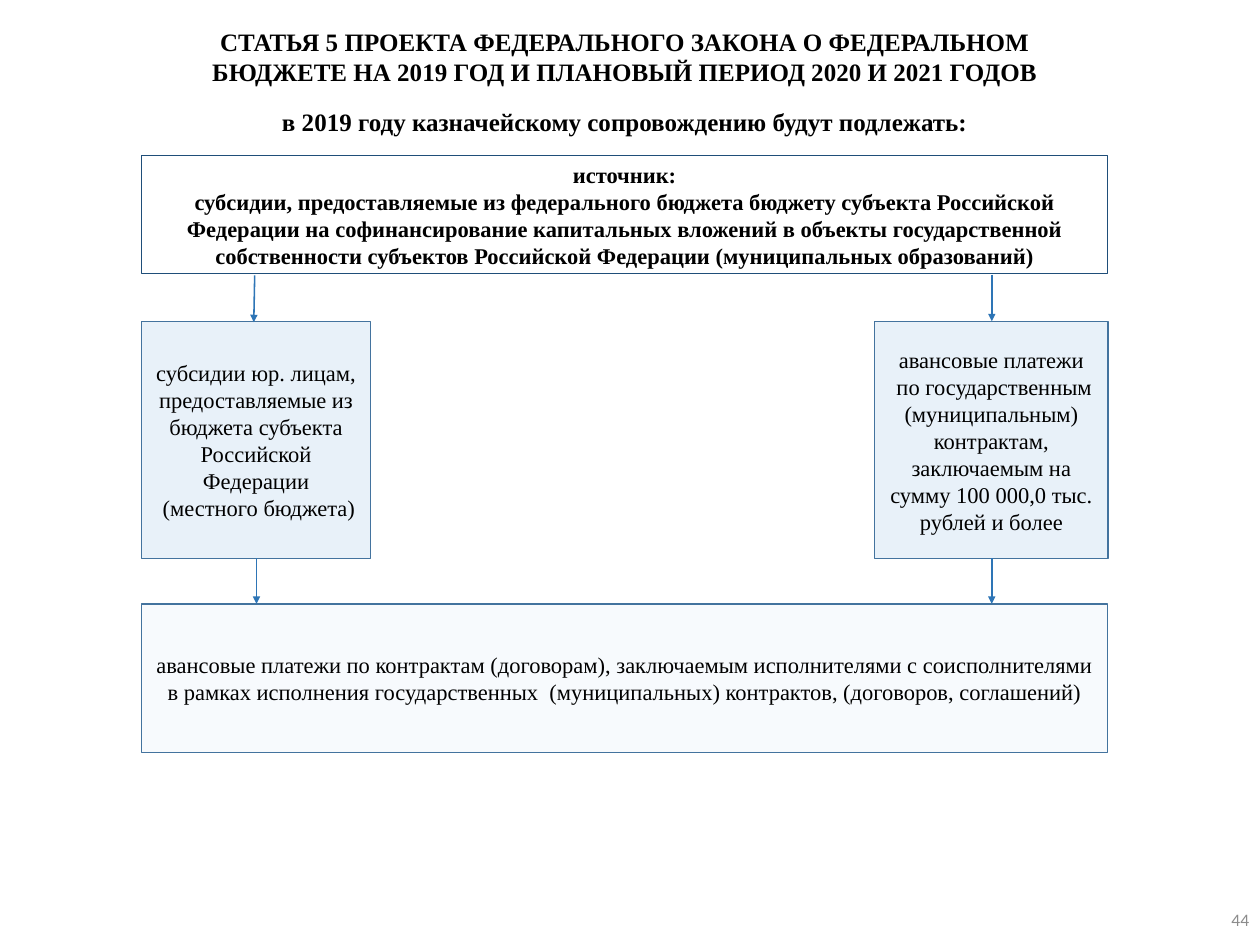
from lxml.etree import SubElement
from pptx import Presentation
from pptx.dml.color import RGBColor
from pptx.enum.shapes import MSO_CONNECTOR, MSO_SHAPE
from pptx.enum.text import MSO_ANCHOR, PP_ALIGN
from pptx.oxml.ns import qn
from pptx.util import Inches, Pt

theme = {
    "ink": RGBColor.from_string("000000"),
    "gray": RGBColor.from_string("8C8C8C"),
    "pale": RGBColor.from_string("DEEBF7"),
    "edge": RGBColor.from_string("43739E"),
    "navy": RGBColor.from_string("1F4E79"),
    "arrow": RGBColor.from_string("2E75B6"),
    "head": {"name": "Times New Roman", "size": Pt(20), "bold": True},
    "strong": {"name": "Times New Roman", "size": Pt(18), "bold": True},
    "body": {"name": "Times New Roman", "size": Pt(18), "bold": False},
    "page": {"name": "Calibri", "size": Pt(14), "bold": False},
}


def write(shape, lines, style, color=theme["ink"], align=PP_ALIGN.CENTER,
          anchor=MSO_ANCHOR.MIDDLE, pad=0.1):
    frame = shape.text_frame
    form = {"word_wrap": True, "vertical_anchor": anchor,
            "margin_left": Inches(pad), "margin_right": Inches(pad),
            "margin_top": Inches(pad / 2), "margin_bottom": Inches(pad / 2)}
    for key, value in form.items():
        setattr(frame, key, value)
    for i, line in enumerate(lines):
        para = frame.add_paragraph() if i else frame.paragraphs[0]
        para.alignment = align
        run = para.add_run()
        run.text = line
        run.font.color.rgb = color
        for key, value in theme[style].items():
            setattr(run.font, key, value)


deck = Presentation()
deck.slide_width, deck.slide_height = Inches(14), Inches(10.5)
slide = deck.slides.add_slide(deck.slide_layouts[6])
shapes = slide.shapes

# Shared grid: outer edges and the rows of boxes
left, wide = 1.57, 10.74
top, mid, low = 1.73, 3.57, 6.71
tall = 2.64

# Headings
heads = [
    ((left, 0.24, wide, 0.77),
     "СТАТЬЯ 5 ПРОЕКТА ФЕДЕРАЛЬНОГО ЗАКОНА О ФЕДЕРАЛЬНОМ "
     "БЮДЖЕТЕ НА 2019 ГОД И ПЛАНОВЫЙ ПЕРИОД 2020 И 2021 ГОДОВ"),
    ((1.14, 1.13, 11.6, 0.44),
     "в 2019 году казначейскому сопровождению будут подлежать:"),
]
for place, text in heads:
    box = shapes.add_textbox(*map(Inches, place))
    write(box, [text], "head", anchor=MSO_ANCHOR.TOP)

# Boxes: place, fill opacity in percent, line colour and width, style, text
boxes = [
    ((left, top, wide, 1.31), 0, "navy", 0.75, "strong",
     ["источник:",
      "субсидии, предоставляемые из федерального бюджета бюджету субъекта "
      "Российской Федерации на софинансирование капитальных вложений в "
      "объекты государственной собственности субъектов Российской "
      "Федерации (муниципальных образований)"]),
    ((left, mid, 2.55, tall), 69, "edge", 1, "body",
     ["субсидии юр. лицам, предоставляемые из бюджета субъекта "
      "Российской Федерации",
      " (местного бюджета)"]),
    ((9.72, mid, 2.59, tall), 69, "edge", 1, "body",
     ["авансовые платежи",
      " по государственным (муниципальным) контрактам, заключаемым на "
      "сумму 100 000,0 тыс. рублей и более"]),
    ((left, low, wide, 1.65), 24, "edge", 1, "body",
     ["авансовые платежи по контрактам (договорам), заключаемым "
      "исполнителями с соисполнителями в рамках исполнения "
      "государственных  (муниципальных) контрактов, (договоров, "
      "соглашений)"]),
]
for place, tint, edge, width, style, lines in boxes:
    box = shapes.add_shape(MSO_SHAPE.RECTANGLE, *map(Inches, place))
    box.shadow.inherit = False
    if tint:
        box.fill.solid()
        box.fill.fore_color.rgb = theme["pale"]
        color = box.fill._xPr.find(qn("a:solidFill"))[0]
        SubElement(color, qn("a:alpha"), val=str(tint * 1000))
    else:
        box.fill.background()
    box.line.color.rgb = theme[edge]
    box.line.width = Pt(width)
    write(box, lines, style)

# Arrows down from row to row
arrows = [
    (2.83, 3.06, 2.82, 3.58),
    (11.02, 3.05, 11.02, mid),
    (2.85, 6.2, 2.85, low),
    (11.02, 6.2, 11.02, low),
]
for ends in arrows:
    link = shapes.add_connector(MSO_CONNECTOR.STRAIGHT, *map(Inches, ends))
    link.line.color.rgb = theme["arrow"]
    link.line.width = Pt(1.25)
    SubElement(link.line._get_or_add_ln(), qn("a:tailEnd"), type="triangle")
    SubElement(link._element.spPr, qn("a:effectLst"))

# Page number
box = shapes.add_textbox(*map(Inches, (13.34, 9.94, 0.66, 0.56)))
write(box, ["44"], "page", theme["gray"], PP_ALIGN.RIGHT, pad=0.12)

deck.save("out.pptx")
